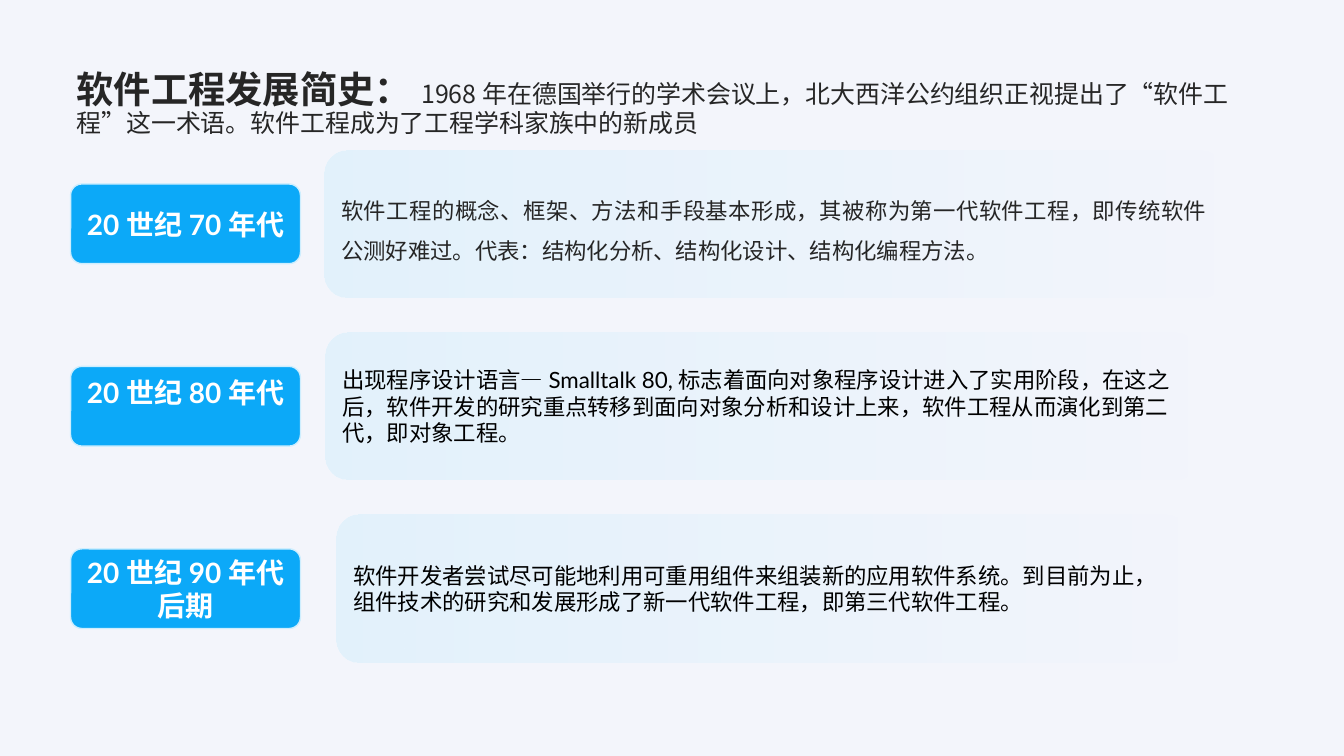
from lxml.etree import SubElement
from pptx import Presentation
from pptx.dml.color import RGBColor
from pptx.enum.lang import MSO_LANGUAGE_ID
from pptx.enum.shapes import MSO_SHAPE
from pptx.enum.text import MSO_ANCHOR, MSO_AUTO_SIZE, PP_ALIGN
from pptx.oxml.ns import qn
from pptx.util import Inches, Pt

LATIN, CHINESE = "Lato", "Noto Sans CJK JP"
BACKGROUND, DARK, BLACK, WHITE = "F3F5FB", "262626", "000000", "FFFFFF"
BLUE, PALE_BLUE = "0CA9F8", "CEEEFE"

HEADING = "软件工程发展简史："
INTRO = ("1968年在德国举行的学术会议上，北大西洋公约组织正视提出了“软件工程”这一术语。"
         "软件工程成为了工程学科家族中的新成员")

# label, label anchor, description, panel left, panel width, colour, alignment, line spacing
ERAS = [
    ("20世纪70年代", MSO_ANCHOR.MIDDLE,
     "软件工程的概念、框架、方法和手段基本形成，其被称为第一代软件工程，即传统软件公测好难过。"
     "代表：结构化分析、结构化设计、结构化编程方法。",
     3.22, 8.92, DARK, PP_ALIGN.JUSTIFY, 1.5),
    ("20世纪80年代", MSO_ANCHOR.TOP,
     "出现程序设计语言—Smalltalk 80,标志着面向对象程序设计进入了实用阶段，在这之后，"
     "软件开发的研究重点转移到面向对象分析和设计上来，软件工程从而演化到第二代，即对象工程。",
     3.23, 8.66, BLACK, PP_ALIGN.LEFT, 1.0),
    ("20世纪90年代后期", MSO_ANCHOR.MIDDLE,
     "软件开发者尝试尽可能地利用可重用组件来组装新的应用软件系统。到目前为止，"
     "组件技术的研究和发展形成了新一代软件工程，即第三代软件工程。",
     3.34, 8.45, BLACK, PP_ALIGN.LEFT, 1.0),
]
FIRST_TOP, ROW_STEP = 1.49, 1.81
PANEL_HEIGHT = 1.46
LABEL_LEFT, LABEL_WIDTH, LABEL_HEIGHT = 0.7, 2.28, 0.79
LABEL_TOP_MARGIN = 0.06


def color(hex_string):
    return RGBColor.from_string(hex_string)


def style(span, size, hex_string, bold=False, latin=LATIN):
    font = span.font
    font.name, font.size, font.bold = latin, Pt(size), bold
    font.color.rgb = color(hex_string)
    font.language_id = MSO_LANGUAGE_ID.SIMPLIFIED_CHINESE
    properties = span._r.get_or_add_rPr()
    east_asian = SubElement(properties, qn("a:ea"))
    east_asian.set("typeface", CHINESE)


def set_margins(frame, left=0, top=0, right=0, bottom=0):
    frame.margin_left, frame.margin_top = Inches(left), Inches(top)
    frame.margin_right, frame.margin_bottom = Inches(right), Inches(bottom)


def add_box(page, left, top, width, height, corner):
    box = page.shapes.add_shape(MSO_SHAPE.ROUNDED_RECTANGLE, Inches(left),
                                Inches(top), Inches(width), Inches(height))
    box.adjustments[0] = corner
    box.shadow.inherit = False
    box.text_frame.word_wrap = True
    return box


def fade_to_right(box):
    """Fill from clear at the right edge to 44% pale blue at the left."""
    box.fill.gradient()
    box.fill.gradient_angle = 180
    for stop in box.fill.gradient_stops:
        stop.color.rgb = color(PALE_BLUE)
    tints = box._element.spPr.iter(qn("a:srgbClr"))
    for tint, opacity in zip(list(tints), (0, 44)):
        SubElement(tint, qn("a:alpha")).set("val", str(opacity * 1000))


def add_title(page):
    title = page.shapes.title
    title.left, title.top = Inches(0.76), Inches(0.41)
    title.width, title.height = Inches(11.81), Inches(0.96)
    frame = title.text_frame
    frame.word_wrap = True
    frame.auto_size = MSO_AUTO_SIZE.NONE
    frame.vertical_anchor = MSO_ANCHOR.BOTTOM
    set_margins(frame)
    para = frame.paragraphs[0]
    para.alignment, para.line_spacing = PP_ALIGN.LEFT, 0.9
    for text, size, bold in ((HEADING, 26.6, True), (INTRO, 17.8, False)):
        span = para.add_run()
        span.text = text
        style(span, size, DARK, bold, CHINESE)


def add_panel(page, text, left, top, width, text_color, alignment, spacing):
    panel = add_box(page, left, top, width, PANEL_HEIGHT, 0.153)
    fade_to_right(panel)
    panel.line.fill.background()
    frame = panel.text_frame
    frame.text = text
    frame.vertical_anchor = MSO_ANCHOR.MIDDLE
    para = frame.paragraphs[0]
    para.alignment, para.line_spacing = alignment, spacing
    style(para.runs[0], 16, text_color)


def add_label(page, text, anchor, top):
    label = add_box(page, LABEL_LEFT, top, LABEL_WIDTH, LABEL_HEIGHT, 0.141)
    label.fill.solid()
    label.fill.fore_color.rgb = color(BLUE)
    label.line.color.rgb = color(PALE_BLUE)
    label.line.width = Pt(1)
    frame = label.text_frame
    frame.text = text
    frame.vertical_anchor = anchor
    set_margins(frame, top=LABEL_TOP_MARGIN if anchor == MSO_ANCHOR.TOP else 0)
    para = frame.paragraphs[0]
    para.alignment = PP_ALIGN.CENTER
    style(para.runs[0], 20, WHITE, bold=True)


def main():
    deck = Presentation()
    deck.slide_width, deck.slide_height = Inches(13.33), Inches(7.5)
    page = deck.slides.add_slide(deck.slide_layouts[5])
    page.background.fill.solid()
    page.background.fill.fore_color.rgb = color(BACKGROUND)
    add_title(page)
    for row, (era, anchor, text, left, width, *text_style) in enumerate(ERAS):
        top = FIRST_TOP + row * ROW_STEP
        add_panel(page, text, left, top, width, *text_style)
        add_label(page, era, anchor, top + (PANEL_HEIGHT - LABEL_HEIGHT) / 2)
    deck.save("out.pptx")


if __name__ == "__main__":
    main()
